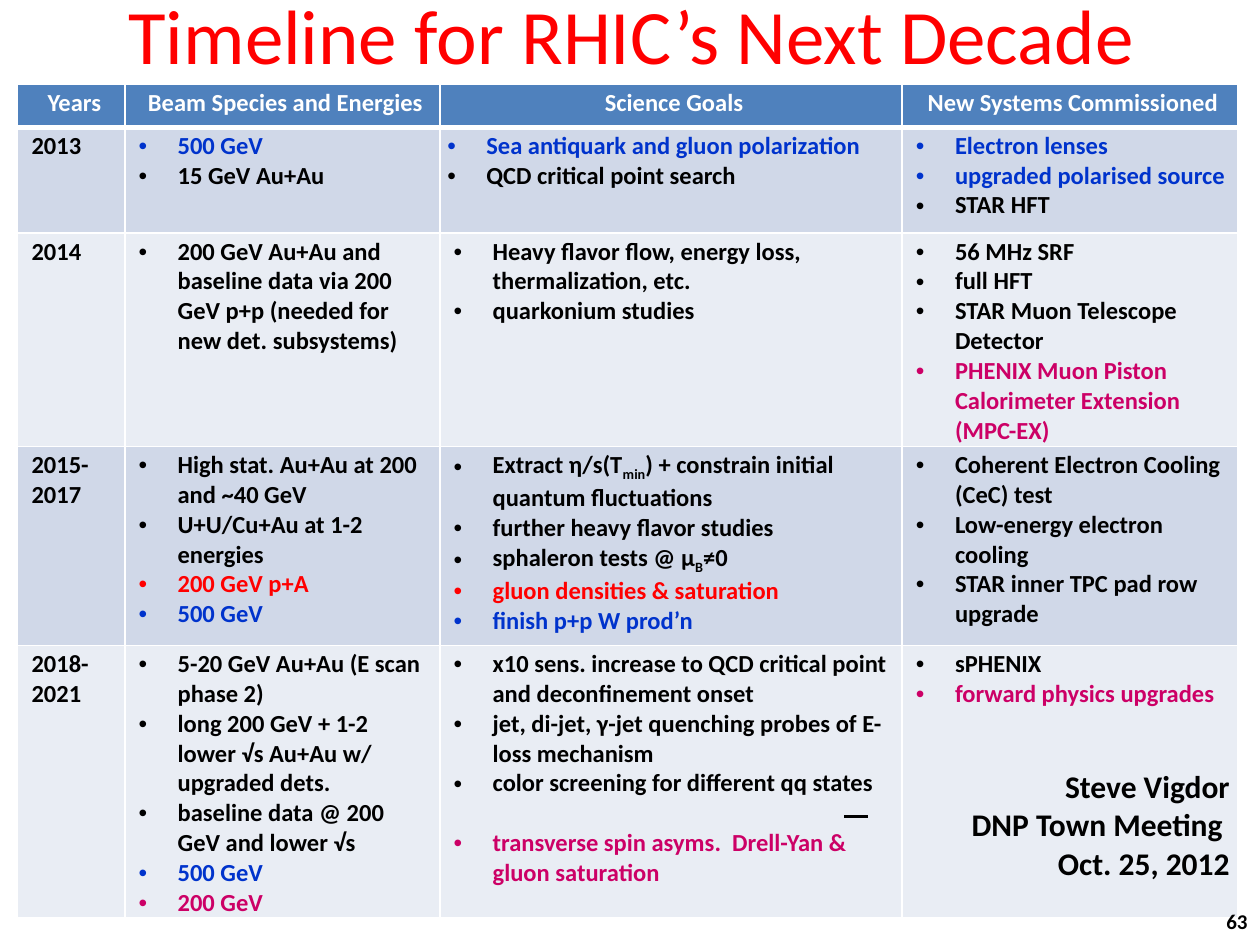
from lxml import etree
from pptx import Presentation
from pptx import util as u
from pptx.dml.color import RGBColor
from pptx.enum import text
from pptx.oxml import parse_xml
from pptx.oxml.ns import nsdecls, qn

FONT = "Calibri"
WHITE, BLACK, RED, BLUE, PINK = "FFFFFF", "000000", "FF0000", "0033CC", "CC0066"
HEAD, BANDS = "4F81BD", ("D0D8E8", "E9EDF4")
COLS = (0.85, 2.5, 3.67, 2.66)
ROWS = (0.34, 0.84, 1.66, 1.58, 2.16)
LEFT, TOP = 0.14, 0.67
PAD, HANG, SHIFT = 0.06, 0.31, 0.05

TITLE = "Timeline for RHIC’s Next Decade"
HEADS = ("Years", "Beam Species and Energies", "Science Goals",
         "New Systems Commissioned")

# Each item is black text or (text, colour); _x_ marks a subscript.
PLAN = [
    ("2013",
     [("500 GeV", BLUE), "15 GeV Au+Au"],
     [("Sea antiquark and gluon polarization", BLUE),
      "QCD critical point search"],
     [("Electron lenses", BLUE), ("upgraded polarised source", BLUE),
      "STAR HFT"]),
    ("2014",
     ["200 GeV Au+Au and baseline data via 200 GeV p+p "
      "(needed for new det. subsystems)"],
     ["Heavy flavor flow, energy loss, thermalization, etc.",
      "quarkonium studies"],
     ["56 MHz SRF", "full HFT", "STAR Muon Telescope Detector",
      ("PHENIX Muon Piston Calorimeter Extension (MPC-EX)", PINK)]),
    ("2015-2017",
     ["High stat. Au+Au at 200 and ~40 GeV", "U+U/Cu+Au at 1-2 energies",
      ("200 GeV p+A", RED), ("500 GeV", BLUE)],
     ["Extract η/s(T_min_) + constrain initial quantum fluctuations",
      "further heavy flavor studies", "sphaleron tests @ μ_B_≠0",
      ("gluon densities & saturation", RED), ("finish p+p W prod’n", BLUE)],
     ["Coherent Electron Cooling (CeC) test", "Low-energy electron cooling",
      "STAR inner TPC pad row upgrade"]),
    ("2018-2021",
     ["5-20 GeV Au+Au (E scan phase 2)",
      "long 200 GeV + 1-2 lower √s Au+Au w/ upgraded dets.",
      "baseline data @ 200 GeV and lower √s",
      ("500 GeV", BLUE), ("200 GeV", PINK)],
     ["x10 sens. increase to QCD critical point and deconfinement onset",
      "jet, di-jet, γ-jet quenching probes of E-loss mechanism",
      "color screening for different qq states",
      ("transverse spin asyms.  Drell-Yan & gluon saturation", PINK)],
     ["sPHENIX", ("forward physics upgrades", PINK)]),
]
CREDIT = ("Steve Vigdor", "DNP Town Meeting ", "Oct. 25, 2012")
LINE = 17  # points in one line of table text


def rgb(code):
    return RGBColor.from_string(code)


def style(para, size, color, bold=True, align=text.PP_ALIGN.LEFT):
    para.alignment = align
    font = para.font
    font.name, font.size, font.bold = FONT, u.Pt(size), bold
    font.color.rgb = rgb(color)


def indent(para, left, first=0):
    props = para._p.get_or_add_pPr()
    props.set("marL", str(u.Inches(left)))
    props.set("indent", str(u.Inches(first)))
    return props


def write(para, words):
    for i, part in enumerate(words.split("_")):
        run = para.add_run()
        run.text = part
        if i % 2:
            run.font._element.set("baseline", "-25000")


def bullets(frame, items, left):
    for i, item in enumerate(items):
        words, color = (item, BLACK) if isinstance(item, str) else item
        para = frame.paragraphs[0] if i == 0 else frame.add_paragraph()
        props = indent(para, left, -HANG)
        etree.SubElement(props, qn("a:buFont")).set("typeface", "Arial")
        etree.SubElement(props, qn("a:buChar")).set("char", "•")
        write(para, words)
        style(para, 14, color)


def edge(cell, fill, top=1, base=1):
    """Fill a cell and draw its white borders."""
    cell.fill.solid()
    cell.fill.fore_color.rgb = rgb(fill)
    sides = {"L": 1, "R": 1, "T": top, "B": base}
    for i, (side, width) in enumerate(sides.items()):
        cell._tc.tcPr.insert(i, parse_xml(
            f'<a:ln{side} {nsdecls("a")} w="{u.Pt(width)}"><a:solidFill>'
            f'<a:srgbClr val="{WHITE}"/></a:solidFill></a:ln{side}>'))
    cell.margin_left = cell.margin_right = u.Inches(PAD)
    cell.margin_top = cell.margin_bottom = u.Inches(PAD / 2)


def label(slide, words, at, size, color, bold, align):
    frame = slide.shapes.add_textbox(*map(u.Inches, at)).text_frame
    frame.word_wrap = True
    frame.vertical_anchor = text.MSO_ANCHOR.MIDDLE
    para = frame.paragraphs[0]
    para.text = words
    style(para, size, color, bold, align)
    return para


def grid(slide):
    at = (LEFT, TOP, sum(COLS), sum(ROWS))
    table = slide.shapes.add_table(len(ROWS), len(COLS),
                                   *map(u.Inches, at)).table
    for col, width in zip(table.columns, COLS):
        col.width = u.Inches(width)
    for row, height in zip(table.rows, ROWS):
        row.height = u.Inches(height)

    for c, words in enumerate(HEADS):
        cell = table.cell(0, c)
        edge(cell, HEAD, base=3)
        para = cell.text_frame.paragraphs[0]
        indent(para, SHIFT)
        para.text = words
        style(para, 14, WHITE, align=text.PP_ALIGN.CENTER)

    for r, (year, *lists) in enumerate(PLAN, 1):
        for c in range(len(COLS)):
            edge(table.cell(r, c), BANDS[(r - 1) % 2], top=3 if r == 1 else 1)
        para = table.cell(r, 0).text_frame.paragraphs[0]
        indent(para, SHIFT)
        para.text = year
        style(para, 14, BLACK)
        for c, items in enumerate(lists, 1):
            left = HANG if (r, c) == (1, 2) else HANG + SHIFT
            bullets(table.cell(r, c).text_frame, items, left)
    return table


def main():
    deck = Presentation()
    deck.slide_width, deck.slide_height = u.Inches(10), u.Inches(7.5)
    slide = deck.slides.add_slide(deck.slide_layouts[6])

    title = label(slide, TITLE, (0.43, 0.02, 9.17, 0.63), 44, RED, False,
                  text.PP_ALIGN.CENTER)
    title.line_spacing = 0.8

    table = grid(slide)
    last = len(PLAN)
    spin = table.cell(last, 2).text_frame.paragraphs[-1]
    spin.space_before = u.Pt(LINE)
    frame = table.cell(last, 3).text_frame
    for i, words in enumerate(CREDIT):
        para = frame.add_paragraph()
        para.text = words
        style(para, 18, BLACK, align=text.PP_ALIGN.RIGHT)
        if i == 0:
            para.space_before = u.Pt(2 * LINE)

    ends = map(u.Inches, (6.7, 6.48, 6.89, 6.48))
    bar = slide.shapes.add_connector(1, *ends)
    bar.line.color.rgb = rgb(BLACK)
    bar.line.width = u.Pt(1.5)
    etree.SubElement(bar._element.spPr, qn("a:effectLst"))

    label(slide, "63", (7.67, 7.11, 2.33, 0.4), 12, BLACK, True,
          text.PP_ALIGN.RIGHT)
    deck.save("out.pptx")


if __name__ == "__main__":
    main()
